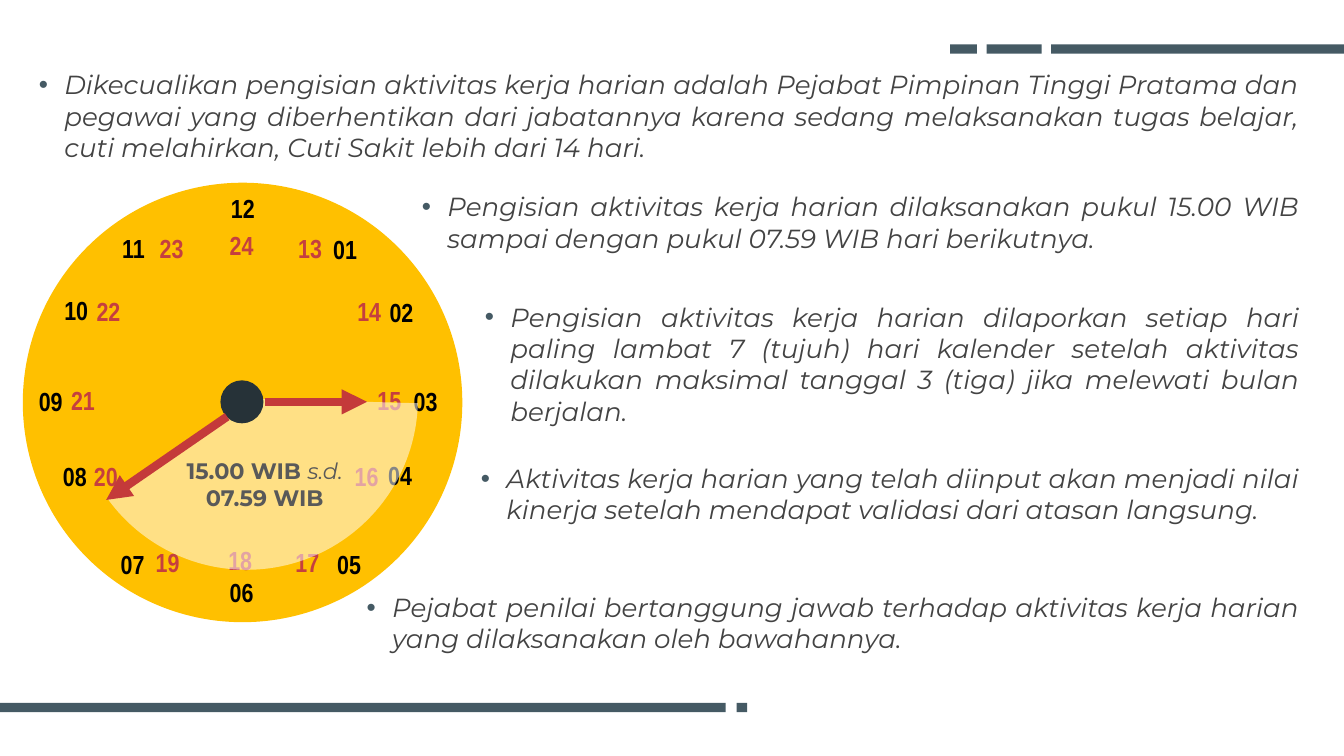
"""Build the slide on daily work activity reporting with a clock face."""
from lxml.etree import SubElement
from pptx import Presentation
from pptx.dml.color import RGBColor
from pptx.enum.shapes import MSO_CONNECTOR, MSO_SHAPE
from pptx.enum.text import MSO_AUTO_SIZE, PP_ALIGN
from pptx.oxml.ns import qn
from pptx.util import Pt

PX = 9144
COLORS = {
    "slate": "455A64", "body": "434343", "face": "FFC000", "hour": "000000",
    "hour24": "C53F3F", "hand": "C43A3A", "hub": "263238", "sector": "FFFFFF",
    "label": "595959",
}
C = {name: RGBColor.from_string(value) for name, value in COLORS.items()}


def add_filled(kind, x, y, w, h, color):
    sp = s.shapes.add_shape(kind, x * PX, y * PX, w * PX, h * PX)
    sp.shadow.inherit = False
    sp.fill.solid()
    sp.fill.fore_color.rgb = C[color]
    sp.line.fill.background()
    return sp


def format_run(r, font, size, color, bold=False, italic=False):
    r.font.name = font
    r.font.size = Pt(size)
    r.font.color.rgb = C[color]
    r.font.bold = bold
    r.font.italic = italic


prs = Presentation()
prs.slide_width = 1000 * PX
prs.slide_height = prs.slide_width * 9 // 16
s = prs.slides.add_slide(prs.slide_layouts[6])

bars = [(0, 523, 540), (548, 523, 8), (707, 33, 20), (734, 33, 41), (782, 33, 218)]
for x, y, w in bars:
    add_filled(MSO_SHAPE.RECTANGLE, x, y, w, 7, "slate")

add_filled(MSO_SHAPE.OVAL, 17, 136, 327, 327, "face")

hours = [
    ("01", 238, 169), ("02", 280, 216), ("03", 298, 282), ("04", 279, 337),
    ("05", 241, 403), ("06", 161, 424), ("07", 80, 403), ("08", 37, 338),
    ("09", 19, 282), ("10", 38, 214), ("11", 81, 168), ("12", 162, 138),
    ("13", 212, 168), ("14", 256, 215), ("15", 271, 281), ("16", 254, 338),
    ("17", 210, 402), ("18", 160, 400), ("19", 106, 402), ("20", 60, 338),
    ("21", 43, 281), ("22", 62, 215), ("23", 109, 168), ("24", 161, 166),
]
for hour, x, y in hours:
    tf = s.shapes.add_textbox(x * PX, y * PX, 38 * PX, 34 * PX).text_frame
    tf.text = hour
    tf.word_wrap = False
    tf.auto_size = MSO_AUTO_SIZE.SHAPE_TO_FIT_TEXT
    color = "hour" if int(hour) <= 12 else "hour24"
    format_run(tf.paragraphs[0].runs[0], "Arial Narrow", 14, color, bold=True)

sector = add_filled(MSO_SHAPE.PIE, 56, 169, 255, 255, "sector")
for i, degrees in enumerate((1.6, 144.4)):
    sector.adjustments[i] = degrees * 60000 / 100000
rgb = sector._element.spPr.find(qn("a:solidFill")).find(qn("a:srgbClr"))
SubElement(rgb, qn("a:alpha"), val="52000")

add_filled(MSO_SHAPE.OVAL, 164, 283, 32, 32, "hub")

for x1, y1, x2, y2 in [(197, 299, 273, 299), (169, 310, 79, 372)]:
    hand = s.shapes.add_connector(
        MSO_CONNECTOR.STRAIGHT, x1 * PX, y1 * PX, x2 * PX, y2 * PX)
    hand.line.color.rgb = C["hand"]
    hand.line.width = Pt(4.5)
    spPr = hand._element.spPr
    SubElement(spPr.find(qn("a:ln")), qn("a:tailEnd"), type="triangle")
    SubElement(spPr, qn("a:effectLst"))

tf = s.shapes.add_textbox(129 * PX, 335 * PX, 136 * PX, 50 * PX).text_frame
tf.text = "15.00 WIB \n07.59 WIB"
tf.word_wrap = False
tf.auto_size = MSO_AUTO_SIZE.SHAPE_TO_FIT_TEXT
for p in tf.paragraphs:
    p.alignment = PP_ALIGN.CENTER
    format_run(p.runs[0], "Montserrat", 12, "label", bold=True)
r = tf.paragraphs[0].add_run()
r.text = "s.d."
format_run(r, "Montserrat", 12, "label", italic=True)

rules = [
    (19, 41, 85, "Dikecualikan pengisian aktivitas kerja harian adalah Pejabat "
     "Pimpinan Tinggi Pratama dan pegawai yang diberhentikan dari jabatannya karena "
     "sedang melaksanakan tugas belajar, cuti melahirkan, Cuti Sakit lebih dari 14 hari."),
    (304, 132, 88, "Pengisian aktivitas kerja harian dilaksanakan pukul 15.00 WIB "
     "sampai dengan pukul 07.59 WIB hari berikutnya."),
    (351, 214, 121, "Pengisian aktivitas kerja harian dilaporkan setiap hari paling "
     "lambat 7 (tujuh) hari kalender setelah aktivitas dilakukan maksimal tanggal 3 "
     "(tiga) jika melewati bulan berjalan."),
    (348, 334, 99, "Aktivitas kerja harian yang telah diinput akan menjadi nilai "
     "kinerja setelah mendapat validasi dari atasan langsung."),
    (263, 430, 79, "Pejabat penilai bertanggung jawab terhadap aktivitas kerja harian "
     "yang dilaksanakan oleh bawahannya."),
]
for x, y, h, rule in rules:
    tf = s.shapes.add_textbox(x * PX, y * PX, (977 - x) * PX, h * PX).text_frame
    tf.text = rule
    tf.word_wrap = True
    tf.margin_left = tf.margin_right = tf.margin_top = tf.margin_bottom = 10 * PX
    p = tf.paragraphs[0]
    p.alignment = PP_ALIGN.JUSTIFY
    format_run(p.runs[0], "Montserrat", 14, "body", italic=True)
    pPr = p._p.get_or_add_pPr()
    pPr.set("marL", str(19 * PX))
    pPr.set("indent", str(-19 * PX))
    SubElement(SubElement(pPr, qn("a:buClr")), qn("a:srgbClr"), val=COLORS["slate"])
    SubElement(pPr, qn("a:buFont"), typeface="Arial")
    SubElement(pPr, qn("a:buChar"), char="•")

prs.save("out.pptx")
